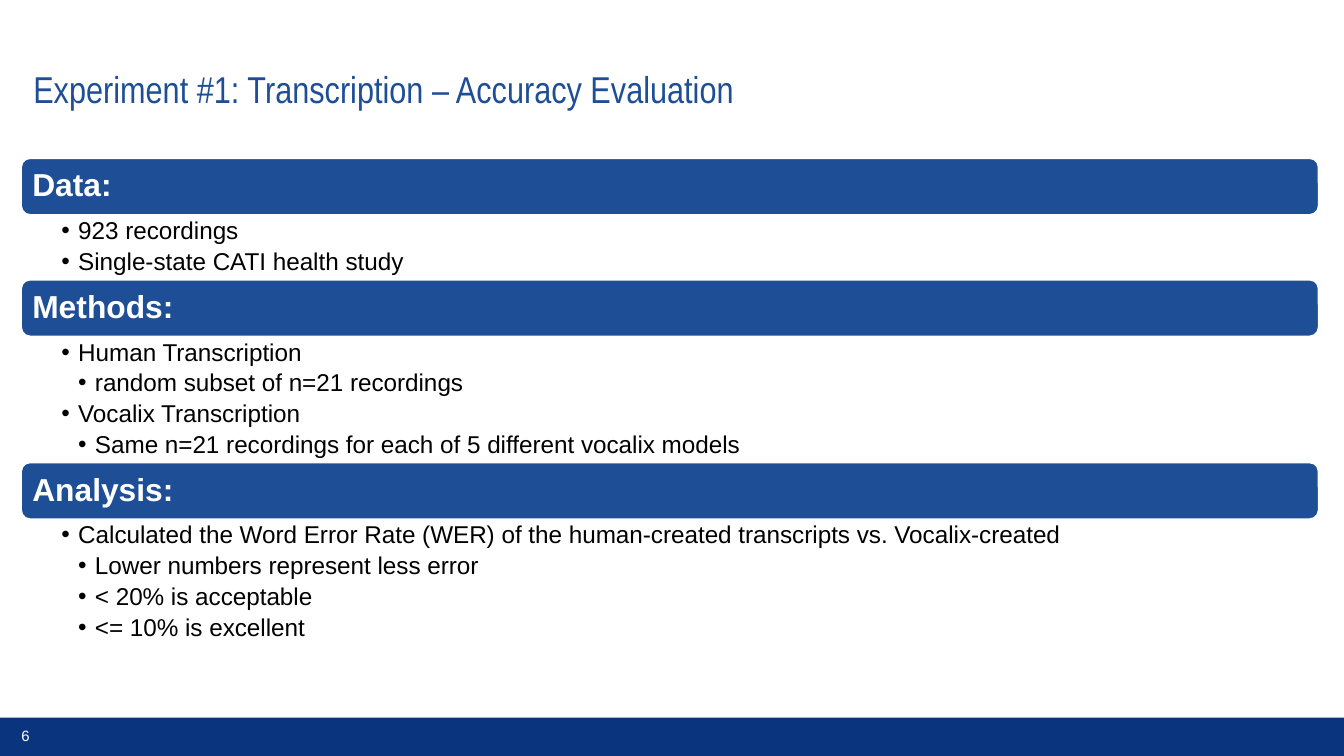
"""Build the slide on transcription accuracy: data, methods and analysis."""
from lxml import etree
from pptx import Presentation
from pptx.dml.color import RGBColor
from pptx.enum import shapes, text
from pptx.oxml import ns
from pptx.util import Pt

BLUE = RGBColor(0x1E, 0x4E, 0x96)
NAVY = RGBColor(0x0A, 0x35, 0x7E)
WHITE = RGBColor(0xFF, 0xFF, 0xFF)
BLACK = RGBColor(0x00, 0x00, 0x00)

LEFT, WIDTH = 10.8, 696.2
BAR_H, LINE_H = 31.5, 16.4

SECTIONS = [
    ("Data:", [(1, "923 recordings"), (1, "Single-state CATI health study")]),
    ("Methods:", [
        (1, "Human Transcription"),
        (2, "random subset of n=21 recordings"),
        (1, "Vocalix Transcription"),
        (2, "Same n=21 recordings for each of 5 different vocalix models"),
    ]),
    ("Analysis:", [
        (1, "Calculated the Word Error Rate (WER) of the human-created "
            "transcripts vs. Vocalix-created"),
        (2, "Lower numbers represent less error"),
        (2, "< 20% is acceptable"),
        (2, "<= 10% is excellent"),
    ]),
]


def set_frame(sp, insets, anchor):
    tf = sp.text_frame
    tf.word_wrap = True
    tf.vertical_anchor = anchor
    tf.margin_left, tf.margin_top, tf.margin_right, tf.margin_bottom = map(Pt, insets)
    return tf


def write(p, words, size, color, name="Arial", bold=False, spacing=0.9):
    p.text = words
    p.alignment = text.PP_ALIGN.LEFT
    p.line_spacing = spacing
    font = p.runs[0].font
    font.size, font.name, font.bold = Pt(size), name, bold
    font.color.rgb = color


prs = Presentation()
prs.slide_width, prs.slide_height = Pt(720), Pt(405)
s = prs.slides.add_slide(prs.slide_layouts[6])

footer = s.shapes.add_shape(shapes.MSO_SHAPE.RECTANGLE, 0, Pt(384.5), Pt(720), Pt(20.5))
footer.shadow.inherit = False
footer.fill.solid()
footer.fill.fore_color.rgb = NAVY
footer.line.fill.background()

title = s.shapes.add_textbox(Pt(LEFT), Pt(10.8), Pt(WIDTH), Pt(76.3))
tf = set_frame(title, (7.2, 7.2, 14.4, 7.2), text.MSO_ANCHOR.MIDDLE)
write(tf.paragraphs[0], "Experiment #1: Transcription – Accuracy Evaluation", 20, BLUE, "Arial Narrow")

top = 84.2
for heading, items in SECTIONS:
    bar = s.shapes.add_shape(shapes.MSO_SHAPE.ROUNDED_RECTANGLE, Pt(LEFT), Pt(top), Pt(WIDTH), Pt(BAR_H))
    bar.shadow.inherit = False
    bar.fill.solid()
    bar.fill.fore_color.rgb = BLUE
    bar.line.color.rgb = WHITE
    bar.line.width = Pt(2)
    tf = set_frame(bar, (5, 5, 5, 5), text.MSO_ANCHOR.MIDDLE)
    write(tf.paragraphs[0], heading, 17, WHITE, bold=True)
    top += BAR_H

    body_h = LINE_H * len(items) + 0.8
    body = s.shapes.add_textbox(Pt(LEFT), Pt(top), Pt(WIDTH), Pt(body_h))
    tf = set_frame(body, (22.1, 1.4, 9.2, 1.4), text.MSO_ANCHOR.TOP)
    for i, (level, words) in enumerate(items):
        p = tf.add_paragraph() if i else tf.paragraphs[0]
        write(p, words, 13, BLACK)
        p.level = level
        p.space_after = Pt(2.5)
        pPr = p._p.get_or_add_pPr()
        pPr.set("marL", str(Pt(9 * level)))
        pPr.set("indent", str(Pt(-9)))
        etree.SubElement(pPr, ns.qn("a:buFont")).set("typeface", "Arial")
        etree.SubElement(pPr, ns.qn("a:buChar")).set("char", "•")
    top += body_h

number = s.shapes.add_textbox(0, Pt(385.2), Pt(27.4), Pt(17.3))
tf = set_frame(number, (7.2, 3.6, 7.2, 3.6), text.MSO_ANCHOR.MIDDLE)
write(tf.paragraphs[0], "6", 8, WHITE, spacing=1.0)
tf.paragraphs[0].alignment = text.PP_ALIGN.CENTER

prs.save("out.pptx")
